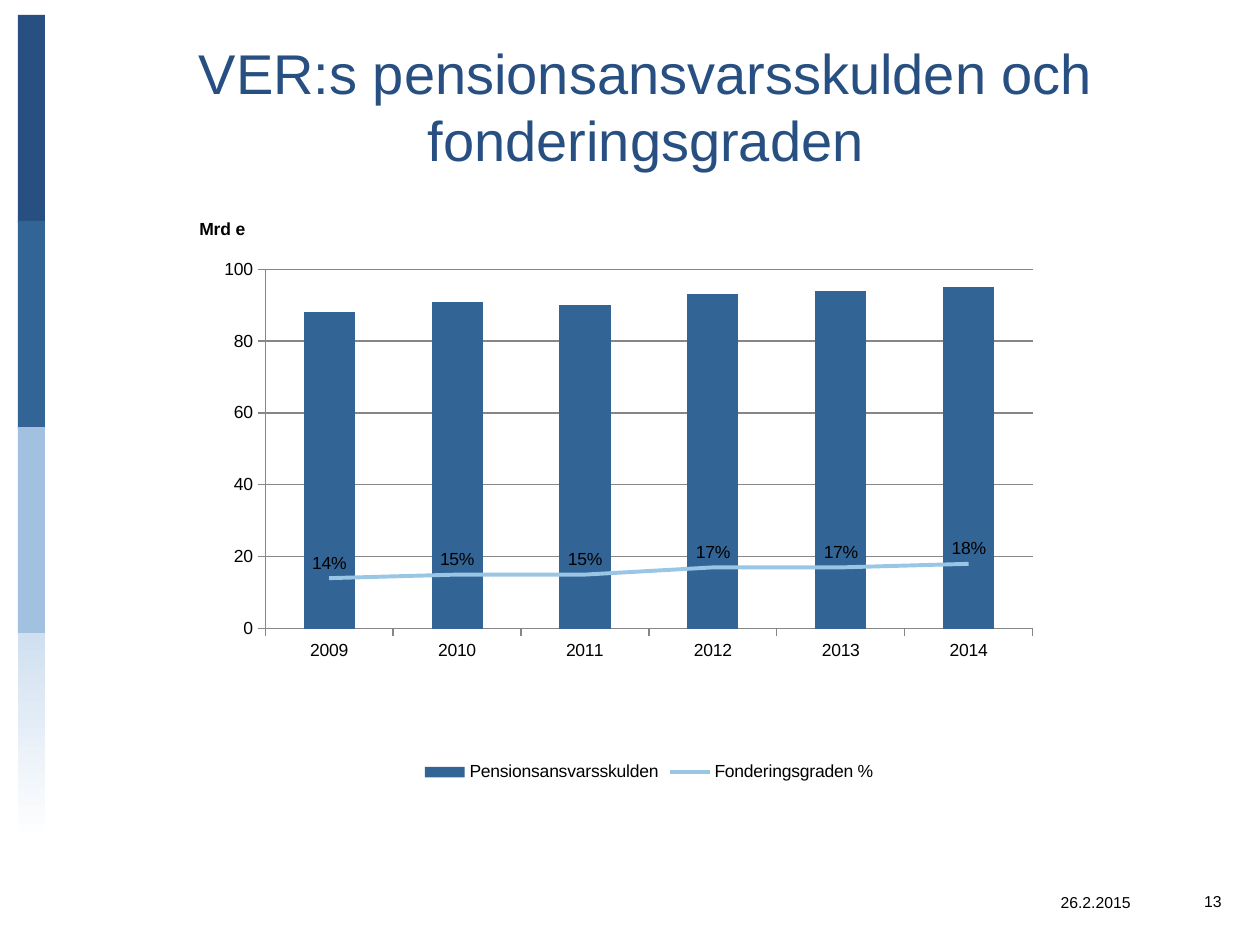
from copy import deepcopy
from dataclasses import dataclass
from pptx import Presentation
from pptx.chart.axis import CategoryAxis, ValueAxis
from pptx.chart.data import CategoryChartData
from pptx.dml.color import RGBColor
from pptx.enum.chart import XL_AXIS_CROSSES as Crosses, XL_CHART_TYPE as ChartType
from pptx.enum.chart import XL_LABEL_POSITION as LabelPos, XL_LEGEND_POSITION as LegendPos
from pptx.enum.chart import XL_MARKER_STYLE as Marker, XL_TICK_LABEL_POSITION as TickLabel, XL_TICK_MARK as Tick
from pptx.enum.shapes import MSO_SHAPE as Preset
from pptx.enum.text import MSO_ANCHOR as Anchor, PP_ALIGN as Align
from pptx.oxml.xmlchemy import OxmlElement
from pptx.util import Pt


@dataclass(frozen=True)
class Theme:
    navy: RGBColor = RGBColor.from_string("274F81")
    blue: RGBColor = RGBColor.from_string("326496")
    light: RGBColor = RGBColor.from_string("A2C1E0")
    pale: RGBColor = RGBColor.from_string("D0E0F0")
    sky: RGBColor = RGBColor.from_string("99C6E4")
    white: RGBColor = RGBColor.from_string("FFFFFF")
    black: RGBColor = RGBColor.from_string("000000")
    grid: RGBColor = RGBColor.from_string("868686")
    font: str = "Arial"
    title: int = 32
    chart: int = 10
    footer: int = 9


theme = Theme()
PX = 914400 / 126


def px(*lengths):
    return [round(length * PX) for length in lengths]


def write(frame, text, size, color, align=None, anchor=None, bold=False):
    frame.text = text
    frame.word_wrap = True
    if anchor is not None:
        frame.vertical_anchor = anchor
    paragraph = frame.paragraphs[0]
    if align is not None:
        paragraph.alignment = align
    font = paragraph.runs[0].font
    font.name, font.size, font.bold = theme.font, Pt(size), bold
    font.color.rgb = color


prs = Presentation()
prs.slide_width, prs.slide_height = px(1260, 945)
slide = prs.slides.add_slide(prs.slide_layouts[5])

for row, color in enumerate([theme.navy, theme.blue, theme.light, None]):
    band = slide.shapes.add_shape(Preset.RECTANGLE, *px(18, 15 + 206 * row, 27, 208))
    band.shadow.inherit = False
    band.line.fill.background()
    if color is not None:
        band.fill.solid()
        band.fill.fore_color.rgb = color
    else:
        band.fill.gradient()
        band.fill.gradient_angle = 90
        for stop, shade in zip(band.fill.gradient_stops, [theme.white, theme.pale]):
            stop.color.rgb = shade

heading = slide.shapes.title
heading.left, heading.top, heading.width, heading.height = px(57, 16, 1178, 179)
write(heading.text_frame, "VER:s pensionsansvarsskulden och fonderingsgraden",
      theme.title, theme.navy, align=Align.CENTER, anchor=Anchor.MIDDLE)

for text, box in [("13", (1154, 876, 80, 50)), ("26.2.2015", (1023, 877, 120, 50))]:
    footer = slide.shapes.add_textbox(*px(*box))
    write(footer.text_frame, text, theme.footer, theme.black, align=Align.RIGHT, anchor=Anchor.MIDDLE)

data = CategoryChartData()
data.categories = ["2009", "2010", "2011", "2012", "2013", "2014"]
data.add_series("Pensionsansvarsskulden", [88, 91, 90, 93, 94, 95], "0")
data.add_series("Fonderingsgraden %", [0.14, 0.15, 0.15, 0.17, 0.17, 0.18], "0%")
chart = slide.shapes.add_chart(ChartType.COLUMN_CLUSTERED, *px(157, 178, 984, 609), data).chart
chart.has_title = False
chart.font.name, chart.font.size = theme.font, Pt(theme.chart)
chart.font.color.rgb = theme.black
chart.has_legend = True
chart.legend.position = LegendPos.BOTTOM
chart.legend.include_in_layout = False

liability_axis = chart.value_axis
for axis in [chart.category_axis, liability_axis]:
    axis.major_tick_mark, axis.minor_tick_mark = Tick.OUTSIDE, Tick.NONE
    axis.format.line.color.rgb = theme.grid

plot_area = chart.element.xpath("//c:plotArea")[0]
year_copy, degree_copy = [deepcopy(plot_area.xpath(f"./c:{tag}")[0]) for tag in ("catAx", "valAx")]
for copied, own_id, cross_id in [(year_copy, "5001", "5002"), (degree_copy, "5002", "5001")]:
    copied.xpath("./c:axId")[0].set("val", own_id)
    copied.xpath("./c:crossAx")[0].set("val", cross_id)
    plot_area.append(copied)
degree_copy.xpath("./c:axPos")[0].set("val", "r")

year_axis, degree_axis = CategoryAxis(year_copy), ValueAxis(degree_copy)
year_axis.visible = False
year_axis.crosses = Crosses.MAXIMUM
degree_axis.has_major_gridlines = False
degree_axis.tick_label_position = TickLabel.NONE
for axis, top in [(liability_axis, 100), (degree_axis, 1)]:
    axis.minimum_scale, axis.maximum_scale, axis.major_unit = 0, top, top / 5
liability_axis.has_major_gridlines = True
liability_axis.major_gridlines.format.line.color.rgb = theme.grid
write(liability_axis.axis_title.text_frame, "Mrd e", theme.chart, theme.black, bold=True)

unit_title = plot_area.xpath("./c:valAx/c:title")[0]
unit_body = unit_title.xpath(".//a:bodyPr")[0]
unit_body.set("rot", "0")
unit_body.set("vert", "horz")

plot_place = dict(layoutTarget="inner", xMode="edge", yMode="edge", x="0.11", y="0.15", w="0.78", h="0.59")
unit_place = dict(xMode="edge", yMode="edge", x="0.04", y="0.06")
for parent, index, place in [(plot_area, 0, plot_place), (unit_title, 1, unit_place)]:
    for old_layout in parent.xpath("./c:layout"):
        parent.remove(old_layout)
    layout, manual = OxmlElement("c:layout"), OxmlElement("c:manualLayout")
    for tag, value in place.items():
        setting = OxmlElement(f"c:{tag}")
        setting.set("val", value)
        manual.append(setting)
    layout.append(manual)
    parent.insert(index, layout)

columns = plot_area.xpath("./c:barChart")[0]
funding = columns.xpath("./c:ser")[1]
for bar_only in funding.xpath("./c:invertIfNegative"):
    funding.remove(bar_only)
funding_plot = OxmlElement("c:lineChart")
for tag, value in [("grouping", "standard"), ("varyColors", "0"), ("marker", "1"),
                   ("axId", "5001"), ("axId", "5002")]:
    setting = OxmlElement(f"c:{tag}")
    setting.set("val", value)
    funding_plot.append(setting)
funding_plot.insert(2, funding)
columns.addnext(funding_plot)

liability_plot, degree_plot = chart.plots
liability_plot.gap_width = 150
liability_plot.vary_by_categories = False
liability_fill = liability_plot.series[0].format.fill
liability_fill.solid()
liability_fill.fore_color.rgb = theme.blue

degree = degree_plot.series[0]
degree.smooth = False
degree.marker.style = Marker.NONE
degree.format.line.color.rgb = theme.sky
degree.format.line.width = Pt(2.25)
labels = degree.data_labels
labels.show_value = True
labels.position = LabelPos.ABOVE
labels.number_format, labels.number_format_is_linked = "0%", False

prs.save("out.pptx")
